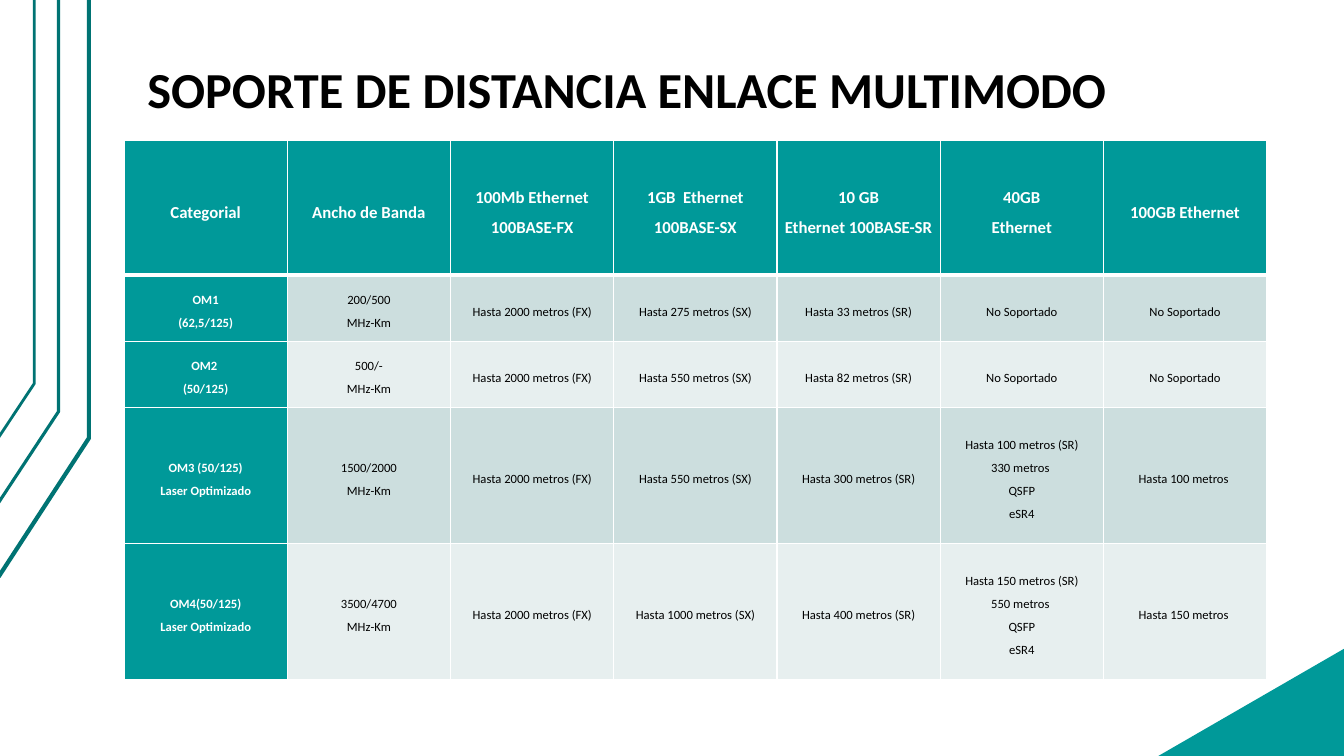
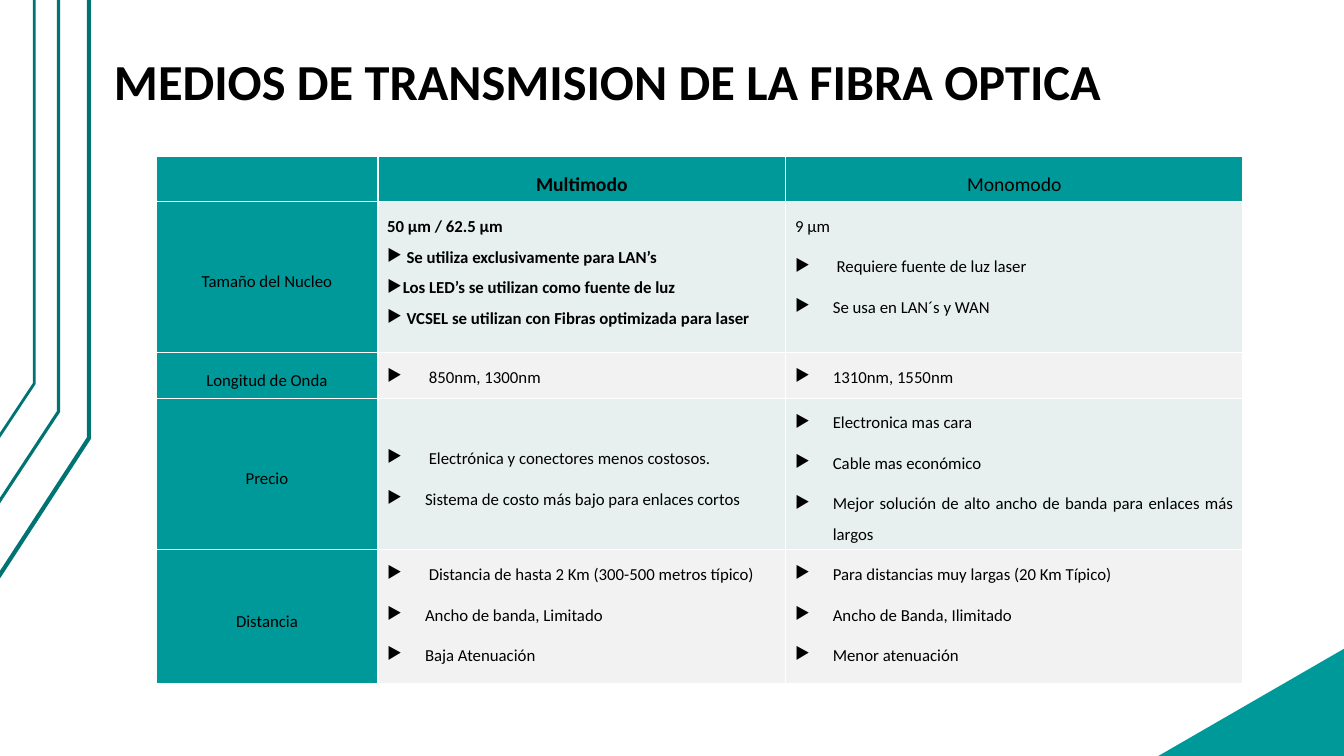
from lxml import etree
from pptx import Presentation
from pptx.dml.color import RGBColor
from pptx.enum.text import MSO_ANCHOR, MSO_AUTO_SIZE, PP_ALIGN
from pptx.oxml.ns import qn
from pptx.util import Pt

MID, TOP, LOW = MSO_ANCHOR.MIDDLE, MSO_ANCHOR.TOP, MSO_ANCHOR.BOTTOM
LEFT, MIDST, JUST = PP_ALIGN.LEFT, PP_ALIGN.CENTER, PP_ALIGN.JUSTIFY
NOFIT = MSO_AUTO_SIZE.NONE

# Shared look
TEAL, DARK, WHITE, BLACK = "009999", "007373", "FFFFFF", "000000"
MIST, PALE, GRAY = "CCDEDE", "E7EFEF", "F2F2F2"
FONT = "Calibri"
SIZE = (960, 540)
LINES = [
    (3, [(-1, 412), (63.5, 313), (63.5, 0)]),
    (2.25, [(-1, 359), (41.8, 294), (41.8, 0)]),
    (2, [(-1, 312.5), (24.5, 274), (24.5, 0)]),
]

# Content: "\n" parts paragraphs, a leading "▶" marks a bullet
REACH = {
    "title": "SOPORTE DE DISTANCIA ENLACE MULTIMODO",
    "head": (95.8, 26, 816, 64),
    "at": (88.6, 100),
    "cols": [116.6] * 7,
    "rows": [96.5, 47.2, 47.2, 97.4, 97.4],
    "inset": (5, 0),
    "bands": (MIST, PALE),
    "rule": 3,
    "cells": [
        ["Categorial", "Ancho de Banda", "100Mb Ethernet 100BASE-FX",
         "1GB  Ethernet 100BASE-SX", "10 GB\nEthernet 100BASE-SR",
         "40GB\nEthernet", "100GB Ethernet"],
        ["OM1\n(62,5/125)", "200/500\nMHz-Km", "Hasta 2000 metros (FX)",
         "Hasta 275 metros (SX)", "Hasta 33 metros (SR)",
         "No Soportado", "No Soportado"],
        ["OM2 \n(50/125)", "500/-\nMHz-Km", "Hasta 2000 metros (FX)",
         "Hasta 550 metros (SX)", "Hasta 82 metros (SR)",
         "No Soportado", "No Soportado"],
        ["OM3 (50/125)\nLaser Optimizado", "1500/2000\nMHz-Km",
         "Hasta 2000 metros (FX)", "Hasta 550 metros (SX)",
         "Hasta 300 metros (SR)",
         "Hasta 100 metros (SR)\n330 metros \nQSFP\neSR4",
         "Hasta 100 metros "],
        ["OM4(50/125)\nLaser Optimizado", "3500/4700\nMHz-Km",
         "Hasta 2000 metros (FX)", "Hasta 1000 metros (SX)",
         "Hasta 400 metros (SR)",
         "Hasta 150 metros (SR)\n550 metros \nQSFP\neSR4",
         "Hasta 150 metros "],
    ],
}
MEDIA = {
    "title": "MEDIOS DE TRANSMISION DE LA FIBRA OPTICA",
    "head": (72, 20.5, 816, 64),
    "at": (111.4, 111.4),
    "cols": [158.6, 291.3, 326.5],
    "rows": [32.6, 107.8, 32.6, 108, 95.4],
    "inset": (6.6, 3.3),
    "bands": (PALE, GRAY),
    "rule": 1,
    "cells": [
        ["", "Multimodo", "Monomodo"],
        ["Tamaño del Nucleo",
         "50 µm / 62.5 µm\n▶ Se utiliza exclusivamente para LAN’s\n"
         "▶Los LED’s se utilizan como fuente de luz\n"
         "▶ VCSEL se utilizan con Fibras optimizada para laser",
         "9 µm\n▶ Requiere fuente de luz laser\n▶Se usa en LAN´s y WAN"],
        ["Longitud de Onda", "▶ 850nm, 1300nm", "▶1310nm, 1550nm"],
        ["Precio",
         "▶ Electrónica y conectores menos costosos.\n"
         "▶Sistema de costo más bajo para enlaces cortos",
         "▶Electronica mas cara\n▶Cable mas económico\n"
         "▶Mejor solución de alto ancho de banda para enlaces más largos"],
        ["Distancia",
         "▶ Distancia de hasta 2 Km (300-500 metros típico)\n"
         "▶Ancho de banda, Limitado\n▶Baja Atenuación",
         "▶Para distancias muy largas (20 Km Típico)\n"
         "▶Ancho de Banda, Ilimitado\n▶Menor atenuación"],
    ],
}


def rgb(code):
    return RGBColor.from_string(code)


def put(item, vals):
    for name, val in vals.items():
        setattr(item, name, val)


def pads(x, y):
    return {"margin_left": Pt(x), "margin_right": Pt(x),
            "margin_top": Pt(y), "margin_bottom": Pt(y)}


def write(para, text, size, color, bold, form):
    put(para, form)
    run = para.add_run()
    run.text = text
    put(run.font, {"name": FONT, "size": Pt(size), "bold": bold})
    run.font.color.rgb = rgb(color)


def bullet(para, left):
    props = para._p.get_or_add_pPr()
    props.set("marL", str(Pt(left)))
    props.set("indent", str(Pt(-27)))
    etree.SubElement(props, qn("a:buChar")).set("char", "▶")


def edge(cell, widths):
    props = cell._tc.get_or_add_tcPr()
    for i, (side, width) in enumerate(widths.items()):
        line = etree.Element(qn("a:ln" + side), w=str(Pt(width)))
        fill = etree.SubElement(line, qn("a:solidFill"))
        etree.SubElement(fill, qn("a:srgbClr")).set("val", WHITE)
        props.insert(i, line)


# Text style of a cell: size, colour, bold, alignment, anchor, space after
def reach_look(r, c):
    lead = r == 0 or c == 0
    return (9 if r else 12, WHITE if lead else BLACK, lead, MIDST, MID, 0)


def media_look(r, c):
    lead = r == 0 or c == 0
    bold = c == 1 and r < 2
    return (12 if r else 14, BLACK, bold, MIDST if lead else JUST,
            MID if lead or r == 3 else TOP, 0 if bold else 7)


def backdrop(deck, layout, slide):
    fill = deck.slide_master.background.fill
    fill.gradient()
    fill.gradient_angle = 300
    for stop, code in zip(fill.gradient_stops, (WHITE, TEAL)):
        stop.position = 0.93
        stop.color.rgb = rgb(code)
    # Lines are drawn once and handed to the layout
    for width, dots in LINES:
        dots = [(Pt(x), Pt(y)) for x, y in dots]
        pen = slide.shapes.build_freeform(*dots[0])
        pen.add_line_segments(dots[1:], close=False)
        shape = pen.convert_to_shape()
        shape.shadow.inherit = False
        shape.fill.background()
        shape.line.width = Pt(width)
        shape.line.color.rgb = rgb(DARK)
        layout.shapes.element.append(shape.element)


def add_title(slide, data):
    box = slide.shapes.title
    put(box, dict(zip(("left", "top", "width", "height"),
                      map(Pt, data["head"]))))
    put(box.text_frame, {"vertical_anchor": LOW, "word_wrap": True,
                         "auto_size": NOFIT, **pads(9.4, 5)})
    write(box.text_frame.paragraphs[0], data["title"], 36, BLACK, True,
          {"alignment": LEFT, "line_spacing": 0.9})


def add_grid(slide, data, look):
    rows, cols = data["rows"], data["cols"]
    spot = (*data["at"], sum(cols), sum(rows))
    grid = slide.shapes.add_table(len(rows), len(cols), *map(Pt, spot)).table
    put(grid, {"first_row": False, "horz_banding": False})
    for col, width in zip(grid.columns, cols):
        col.width = Pt(width)
    for row, height in zip(grid.rows, rows):
        row.height = Pt(height)
    for r, texts in enumerate(data["cells"]):
        for c, text in enumerate(texts):
            size, color, bold, align, anchor, after = look(r, c)
            cell = grid.cell(r, c)
            put(cell, {"vertical_anchor": anchor, **pads(*data["inset"])})
            lead = r == 0 or c == 0
            cell.fill.solid()
            cell.fill.fore_color.rgb = rgb(
                TEAL if lead else data["bands"][(r - 1) % 2])
            edge(cell, {"L": 1, "R": 1, "T": data["rule"] if r == 1 else 1,
                        "B": data["rule"] if r == 0 else 1})
            form = {"alignment": align, "line_spacing": 1.5,
                    "space_after": Pt(after)}
            frame = cell.text_frame
            for i, part in enumerate(text.split("\n") if text else []):
                para = frame.add_paragraph() if i else frame.paragraphs[0]
                write(para, part.lstrip("▶"), size, color, bold, form)
                if part.startswith("▶"):
                    bullet(para, 0 if bold else 27)


def main():
    deck = Presentation()
    deck.slide_width, deck.slide_height = map(Pt, SIZE)
    layout = deck.slide_layouts[5]
    for data, look in ((REACH, reach_look), (MEDIA, media_look)):
        slide = deck.slides.add_slide(layout)
        if data is REACH:
            backdrop(deck, layout, slide)
        add_title(slide, data)
        add_grid(slide, data, look)
    deck.save("out.pptx")


if __name__ == "__main__":
    main()
